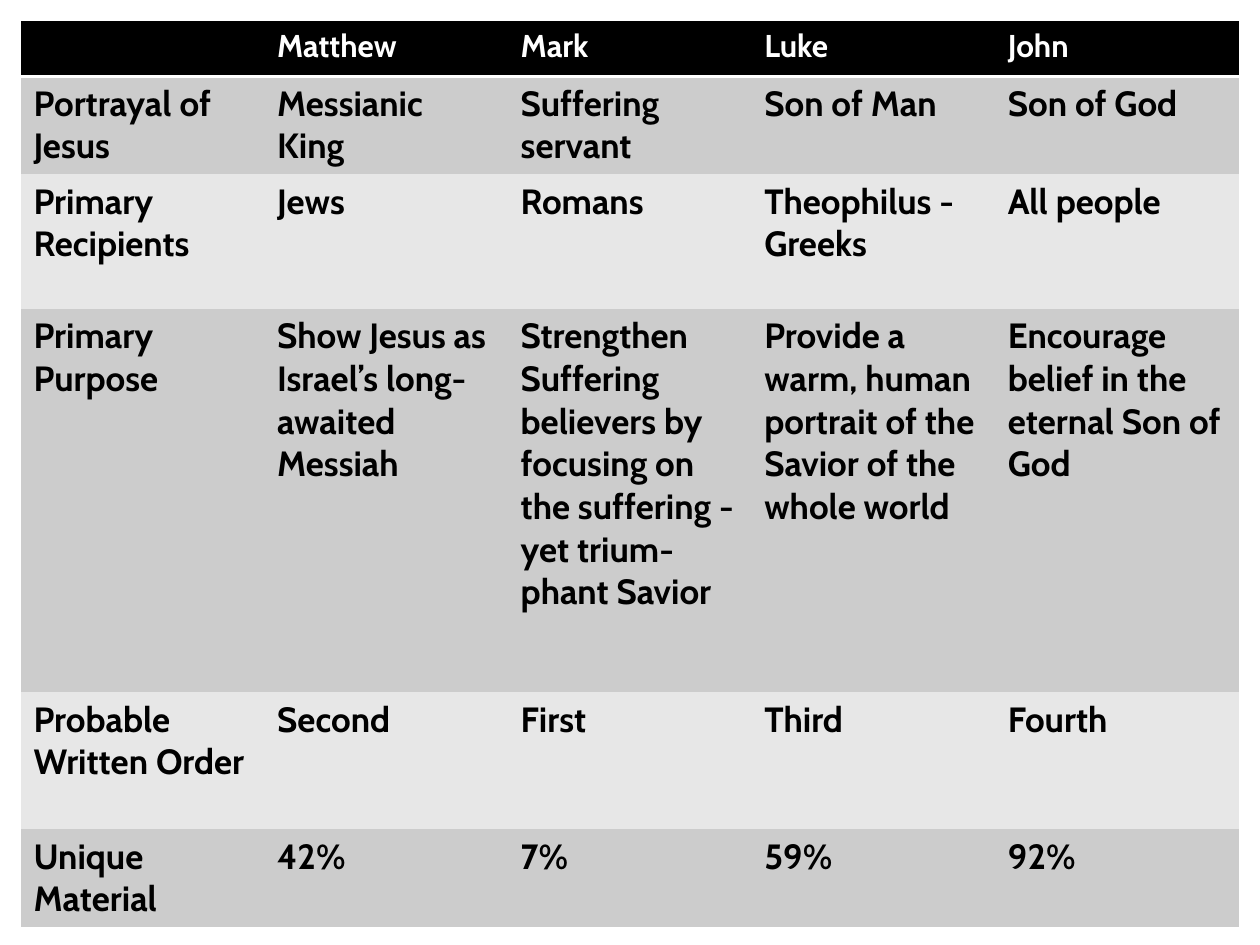
from lxml.etree import SubElement
from pptx import Presentation
from pptx.dml.color import RGBColor as Rgb
from pptx.oxml import parse_xml
from pptx.oxml.ns import nsdecls, qn
from pptx.util import Pt

COLOURS = {
    "header": "000000",
    "header_text": "FFFFFF",
    "rule": "FFFFFF",
    "odd_row": "CCCCCC",
    "even_row": "E7E7E7",
    "text": "000000",
}
FONT = "Cabin"
PLAIN_TABLE_STYLE = "{2D5ABB26-0587-4C30-8999-92F81FD0307C}"
LEFT, TOP, COLUMN_WIDTH = 12, 12, 139.2
ROW_HEIGHTS = [31.5, 55.7, 77, 219, 78.3, 55.7]
GOSPELS = [
    ["", "Matthew", "Mark", "Luke", "John"],
    ["Portrayal of Jesus", "Messianic King", "Suffering servant", "Son of Man", "Son of God"],
    ["Primary Recipients", "Jews", "Romans", "Theophilus - Greeks", "All people"],
    [
        "Primary Purpose",
        "Show Jesus as Israel’s long-awaited Messiah",
        "Strengthen Suffering believers by focusing on the suffering - yet trium-\nphant Savior",
        "Provide a warm, human portrait of the Savior of the whole world",
        "Encourage belief in the eternal Son of God",
    ],
    ["Probable Written Order", "Second", "First", "Third", "Fourth"],
    ["Unique Material", "42%", "7%", "59%", "92%"],
]


def write_text(frame, text, size=20, colour="text", bold=True):
    """Fill a text frame, one paragraph to a line of text."""
    frame.text = text
    for para in frame.paragraphs:
        for span in para.runs:
            span.font.name = FONT
            span.font.size = Pt(size)
            span.font.bold = bold
            span.font.color.rgb = Rgb.from_string(COLOURS[colour])


def fill_cell(cell, colour):
    """Give a cell a solid fill."""
    cell.fill.solid()
    cell.fill.fore_color.rgb = Rgb.from_string(COLOURS[colour])


def rule_below(cell, colour, width):
    """Draw a line along the bottom of a cell."""
    line = parse_xml(f'<a:lnB {nsdecls("a")} w="{Pt(width)}"/>')
    fill = SubElement(line, qn("a:solidFill"))
    SubElement(fill, qn("a:srgbClr")).set("val", COLOURS[colour])
    cell._tc.get_or_add_tcPr().insert(0, line)


def add_plain_table(page, row_heights, column_count):
    """Add a table without style borders, with equal columns."""
    frame = page.shapes.add_table(
        len(row_heights), column_count, Pt(LEFT), Pt(TOP),
        Pt(COLUMN_WIDTH * column_count), Pt(sum(row_heights)),
    )
    table = frame.table
    table._tbl.tblPr.find(qn("a:tableStyleId")).text = PLAIN_TABLE_STYLE
    for column in table.columns:
        column.width = Pt(COLUMN_WIDTH)
    for row, height in zip(table.rows, row_heights):
        row.height = Pt(height)
    return table


def fill_header(table, titles):
    """Write the header row with its rule."""
    for cell, title in zip(table.rows[0].cells, titles):
        write_text(cell.text_frame, title, size=18, colour="header_text")
        fill_cell(cell, "header")
        rule_below(cell, "rule", 2)


def fill_body(table, rows):
    """Write the body rows in alternating greys."""
    for number, texts in enumerate(rows, start=1):
        for cell, text in zip(table.rows[number].cells, texts):
            write_text(cell.text_frame, text)
            fill_cell(cell, "odd_row" if number % 2 else "even_row")


def main():
    """Build the slide that compares the four Gospels."""
    deck = Presentation()
    deck.slide_width, deck.slide_height = Pt(720), Pt(540)
    page = deck.slides.add_slide(deck.slide_layouts[6])
    table = add_plain_table(page, ROW_HEIGHTS, len(GOSPELS[0]))
    fill_header(table, GOSPELS[0])
    fill_body(table, GOSPELS[1:])
    deck.save("out.pptx")


if __name__ == "__main__":
    main()
